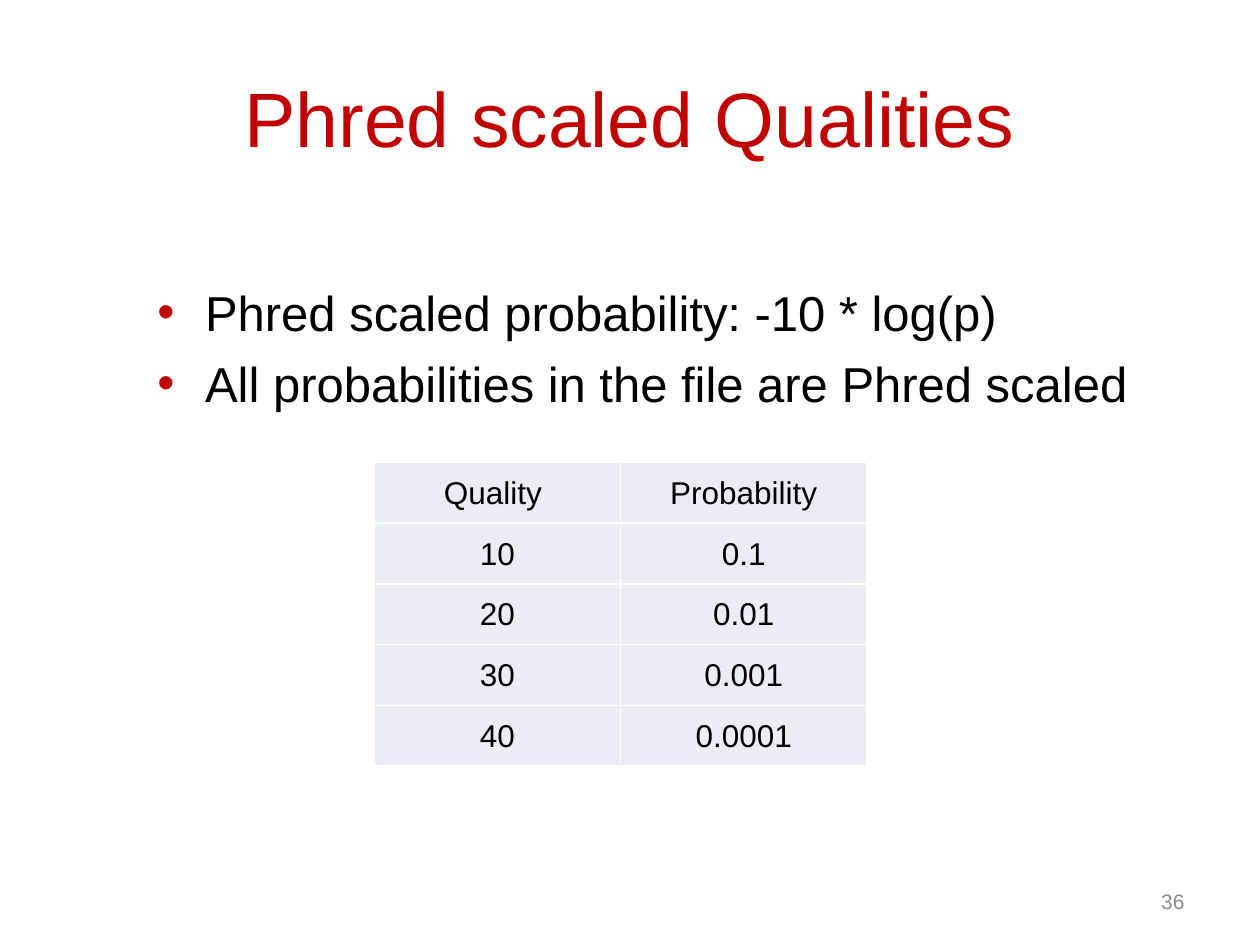
from dataclasses import dataclass

from lxml.etree import SubElement
from pptx import Presentation
from pptx.dml.color import RGBColor
from pptx.enum.text import MSO_ANCHOR as Anchor, PP_ALIGN as Align
from pptx.oxml.ns import qn
from pptx.util import Inches, Pt

FONT = "Arial"
RED, BLACK, GREY = "C00200", "000000", "8C8C8C"
CELL_FILL, BORDER = "E9EDF4", "FFFFFF"


@dataclass
class TextBlock:
    left: float
    top: float
    width: float
    height: float
    lines: list[str]
    size: float
    color: str
    align: Align = Align.LEFT
    anchor: Anchor = Anchor.MIDDLE
    top_margin: float = 0.05
    bulleted: bool = False


BLOCKS = [
    TextBlock(0.5, 0.3, 9, 1.25, ["Phred scaled Qualities"], 44, RED, Align.CENTER),
    TextBlock(
        1.15, 2.15, 7.93, 1.36,
        ["Phred scaled probability: -10 * log(p)",
         "All probabilities in the file are Phred scaled"],
        28, BLACK, anchor=Anchor.TOP, top_margin=0.09, bulleted=True,
    ),
    TextBlock(7.17, 6.95, 2.33, 0.4, ["36"], 12, GREY, Align.RIGHT),
]

QUALITIES = [
    ("Quality ", "Probability"),
    ("10", "0.1"),
    ("20", "0.01"),
    ("30", "0.001"),
    ("40", "0.0001"),
]


def rgb(color: str) -> RGBColor:
    return RGBColor.from_string(color)


def style_paragraph(para, size: float, color: str, align: Align) -> None:
    para.alignment = align
    para.font.name = FONT
    para.font.size = Pt(size)
    para.font.color.rgb = rgb(color)


def add_bullet(para, color: str) -> None:
    properties = para._p.get_or_add_pPr()
    properties.set("marL", str(Inches(0.38)))
    properties.set("indent", str(-Inches(0.38)))
    bullet_color = SubElement(properties, qn("a:buClr"))
    SubElement(bullet_color, qn("a:srgbClr"), val=color)
    SubElement(properties, qn("a:buFont"), typeface=FONT)
    SubElement(properties, qn("a:buChar"), char="•")


def draw_text(page, block: TextBlock) -> None:
    box = page.shapes.add_textbox(
        Inches(block.left), Inches(block.top), Inches(block.width), Inches(block.height)
    )
    frame = box.text_frame
    frame.word_wrap = True
    frame.vertical_anchor = block.anchor
    frame.margin_top = Inches(block.top_margin)
    for index, line in enumerate(block.lines):
        para = frame.add_paragraph() if index else frame.paragraphs[0]
        para.text = line
        if block.bulleted:
            add_bullet(para, RED)
        if index:
            para.space_before = Pt(7)
        style_paragraph(para, block.size, block.color, block.align)


def add_borders(cell, color: str) -> None:
    properties = cell._tc.get_or_add_tcPr()
    for position, side in enumerate(("lnL", "lnR", "lnT", "lnB")):
        line = properties.makeelement(qn(f"a:{side}"), {"w": str(Pt(1))})
        fill = SubElement(line, qn("a:solidFill"))
        SubElement(fill, qn("a:srgbClr"), val=color)
        properties.insert(position, line)


def draw_table(page, rows: list[tuple[str, str]]) -> None:
    table = page.shapes.add_table(
        len(rows), len(rows[0]), Inches(2.97), Inches(3.67), Inches(3.91), Inches(2.41)
    ).table
    table.first_row = False
    table.horz_banding = False
    for row, values in enumerate(rows):
        for column, value in enumerate(values):
            cell = table.cell(row, column)
            cell.text = value
            cell.vertical_anchor = Anchor.MIDDLE
            cell.margin_left = cell.margin_right = cell.margin_top = Inches(0.01)
            cell.margin_bottom = Inches(0)
            cell.fill.solid()
            cell.fill.fore_color.rgb = rgb(CELL_FILL)
            add_borders(cell, BORDER)
            style_paragraph(cell.text_frame.paragraphs[0], 18, BLACK, Align.CENTER)


def main() -> None:
    deck = Presentation()
    deck.slide_width, deck.slide_height = Inches(10), Inches(7.5)
    page = deck.slides.add_slide(deck.slide_layouts[6])
    for block in BLOCKS:
        draw_text(page, block)
    draw_table(page, QUALITIES)
    deck.save("out.pptx")


if __name__ == "__main__":
    main()
